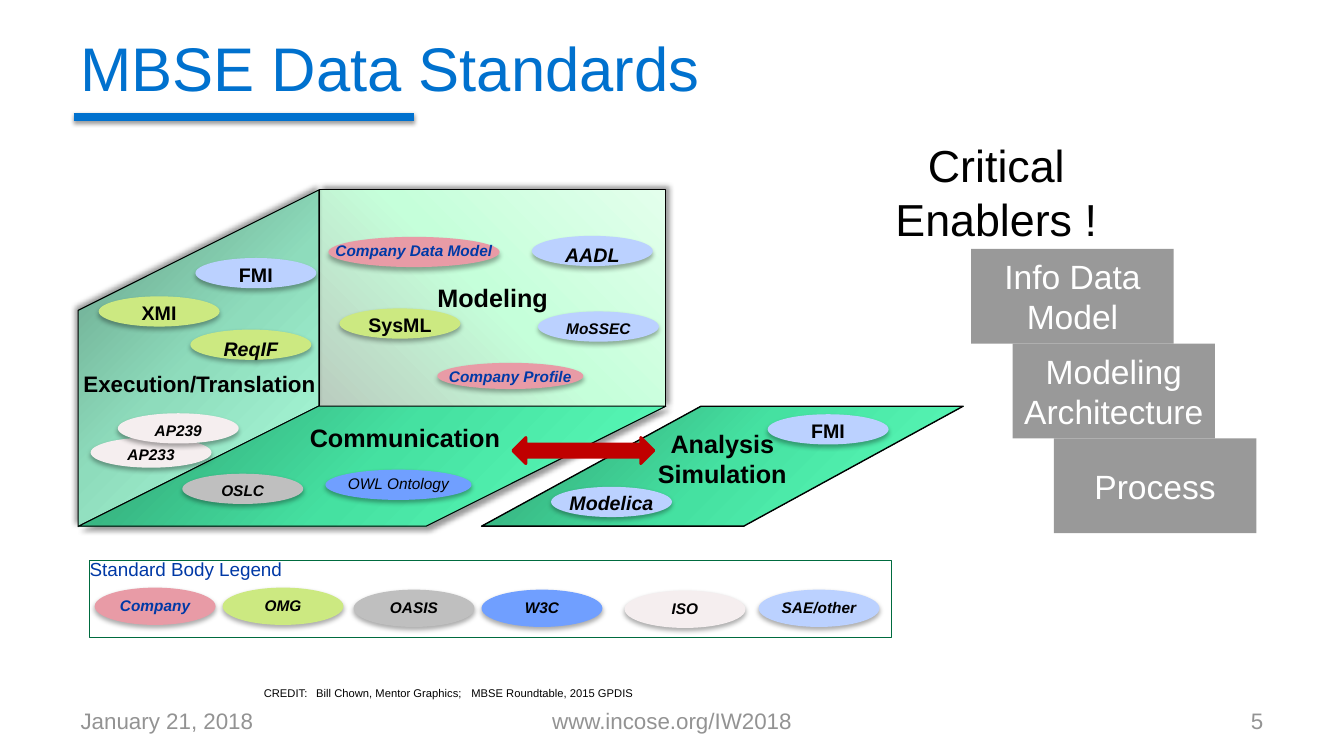
from dataclasses import dataclass

from lxml import etree
from pptx import Presentation
from pptx.dml.color import RGBColor
from pptx.enum.shapes import MSO_CONNECTOR, MSO_SHAPE
from pptx.enum.text import MSO_ANCHOR, PP_ALIGN
from pptx.oxml.ns import qn
from pptx.util import Inches, Pt

LEFT, CENTER, RIGHT = PP_ALIGN.LEFT, PP_ALIGN.CENTER, PP_ALIGN.RIGHT
TOP, MIDDLE = MSO_ANCHOR.TOP, MSO_ANCHOR.MIDDLE
RECT, OVAL = MSO_SHAPE.RECTANGLE, MSO_SHAPE.OVAL
PARALLELOGRAM, ARROW = MSO_SHAPE.PARALLELOGRAM, MSO_SHAPE.LEFT_RIGHT_ARROW
STRAIGHT = MSO_CONNECTOR.STRAIGHT


@dataclass(frozen=True)
class Theme:
    font: str = "Arial"
    title: str = "0071CE"
    footer: str = "939393"
    ink: str = "000000"
    paper: str = "FFFFFF"
    navy: str = "0039A6"
    frame: str = "006B3F"
    step: str = "999999"
    arrow: str = "C00000"
    company: str = "E89BA6"
    omg: str = "CCE981"
    oasis: str = "BFBFBF"
    w3c: str = "709FFF"
    iso: str = "F5EEEF"
    sae: str = "BBD1FF"
    back_wall: tuple = ("BACCBF", "C5FFDA", "E3FFEC")
    side_wall: tuple = ("649B84", "8EDCBC", "AEFFDE")
    floor: tuple = ("309E71", "45E1A1", "5EFFBD")
    title_size: float = 44
    callout_size: float = 32
    step_size: float = 24
    head_size: float = 18
    body_size: float = 16
    label_size: float = 14
    legend_size: float = 13.5
    small_size: float = 11
    credit_size: float = 8


T = Theme()
OVAL_SHADOW = (32, 3.5, 2.2, 90)


class Deck:
    def __init__(self, theme, width, height):
        self.theme = theme
        self.prs = Presentation()
        self.prs.slide_width, self.prs.slide_height = Inches(width), Inches(height)
        self.s = self.prs.slides.add_slide(self.prs.slide_layouts[6])

    def label(self, sp, text, size, color=T.ink, bold=False, italic=False, align=CENTER,
              anchor=TOP, insets=(0.1, 0.05, 0.1, 0.05), wrap=True, spacing=None, tabs=()):
        tf = sp.text_frame
        sides = ("margin_left", "margin_top", "margin_right", "margin_bottom")
        frame = dict(zip(sides, map(Inches, insets)))
        for name, value in {**frame, "word_wrap": wrap, "vertical_anchor": anchor}.items():
            setattr(tf, name, value)
        p = tf.paragraphs[0]
        p.text = text
        p.alignment = align
        if spacing:
            p.line_spacing = spacing
        if tabs:
            stops = etree.SubElement(p._p.get_or_add_pPr(), qn("a:tabLst"))
            for pos in tabs:
                etree.SubElement(stops, qn("a:tab"), pos=str(Inches(pos)), algn="l")
        style = {"name": self.theme.font, "size": Pt(size), "bold": bold, "italic": italic}
        for r in p.runs:
            for name, value in style.items():
                setattr(r.font, name, value)
            r.font.color.rgb = RGBColor.from_string(color)

    def text(self, box, text, size, **style):
        sp = self.s.shapes.add_textbox(*map(Inches, box))
        self.label(sp, text, size, **style)

    def shadow(self, sp, opacity, blur, distance, angle):
        spPr = sp._element.spPr
        effects = spPr.find(qn("a:effectLst"))
        if effects is None:
            effects = etree.SubElement(spPr, qn("a:effectLst"))
        outer = etree.SubElement(effects, qn("a:outerShdw"), blurRad=str(Pt(blur)),
                                 dist=str(Pt(distance)), dir=str(angle * 60000),
                                 algn="ctr", rotWithShape="0")
        color = etree.SubElement(outer, qn("a:srgbClr"), val=self.theme.ink)
        etree.SubElement(color, qn("a:alpha"), val=str(opacity * 1000))

    def gradient(self, sp, colors, angle):
        sp.fill.gradient()
        grad = sp._element.spPr.find(qn("a:gradFill"))
        for child in list(grad):
            grad.remove(child)
        stops = etree.SubElement(grad, qn("a:gsLst"))
        for i, color in enumerate(colors):
            stop = etree.SubElement(stops, qn("a:gs"), pos=str(i * 50000))
            etree.SubElement(stop, qn("a:srgbClr"), val=color)
        if angle is None:
            radial = etree.SubElement(grad, qn("a:path"))
            radial.set("path", "circle")
            etree.SubElement(radial, qn("a:fillToRect"), r="100000", b="100000")
        else:
            etree.SubElement(grad, qn("a:lin"), ang=str(angle * 60000), scaled="0")

    def shape(self, kind, box, fill=None, line=None, width=0.75, shadow=None, adj=None):
        sp = self.s.shapes.add_shape(kind, *map(Inches, box))
        sp.shadow.inherit = False
        if fill:
            sp.fill.solid()
            sp.fill.fore_color.rgb = RGBColor.from_string(fill)
        else:
            sp.fill.background()
        if line:
            sp.line.color.rgb = RGBColor.from_string(line)
            sp.line.width = Pt(width)
        else:
            sp.line.fill.background()
        if shadow:
            self.shadow(sp, *shadow)
        if adj:
            sp.adjustments[0] = adj
        return sp

    def face(self, kind, box, colors, angle, **look):
        sp = self.shape(kind, box, line=self.theme.ink, **look)
        self.gradient(sp, colors, angle)
        return sp

    def oval(self, box, fill, text, size, inset=0.03, bold=True, italic=True):
        sp = self.shape(OVAL, box, fill, shadow=OVAL_SHADOW)
        color = self.theme.navy if fill == self.theme.company else self.theme.ink
        self.label(sp, text, size, color=color, bold=bold, italic=italic,
                   insets=(0, inset, 0, 0.03), wrap=False)

    def rule(self, x1, y1, x2, y2, color, width):
        line = self.s.shapes.add_connector(STRAIGHT, *map(Inches, (x1, y1, x2, y2)))
        line.line.color.rgb = RGBColor.from_string(color)
        line.line.width = Pt(width)
        self.shadow(line, 38, 3.1, 1.6, 90)


def main():
    d = Deck(T, 13.34, 7.5)
    wide = (0.13, 0.07, 0.13, 0.07)
    d.rule(0.73, 1.16, 4.11, 1.16, T.title, 6)
    d.text((0.67, 0.04, 12.01, 1.25), "MBSE Data Standards", T.title_size, color=T.title,
           align=LEFT, anchor=MIDDLE, insets=wide)
    for x, w, text, align in ((0.67, 3.11, "January 21, 2018", LEFT),
                              (4.56, 4.22, "www.incose.org/IW2018", CENTER),
                              (9.56, 3.11, "5", RIGHT)):
        d.text((x, 6.95, w, 0.4), text, T.body_size, color=T.footer, align=align,
               anchor=MIDDLE, insets=wide)

    modeling = d.face(RECT, (3.17, 1.88, 3.44, 2.15), T.back_wall, 315,
                      shadow=(40, 4, 3, 315))
    d.label(modeling, "Modeling", T.head_size, bold=True, anchor=MIDDLE)
    execution = d.face(PARALLELOGRAM, (0.3, 2.36, 3.34, 2.39), T.side_wall, None,
                       shadow=(40, 4, 3, 225), adj=0.5)
    execution.rotation = 270
    execution._element.spPr.xfrm.set("flipV", "1")
    d.face(PARALLELOGRAM, (0.78, 4.03, 5.83, 1.19), T.floor, 45,
           shadow=(40, 4, 3, 45), adj=2)
    d.text((2.77, 4.14, 2.5, 0.4), "Communication", T.head_size, bold=True, anchor=MIDDLE)
    d.text((0.73, 3.62, 2.6, 0.37), "Execution/Translation", T.body_size, bold=True,
           align=LEFT, insets=(0.1, 0.05, 0, 0.05))
    analysis = d.face(PARALLELOGRAM, (4.78, 4.03, 4.78, 1.19), T.floor, 45, width=1, adj=1.83)
    d.label(analysis, "Analysis\vSimulation", T.head_size, bold=True, anchor=MIDDLE,
            insets=(0.1, 0.05, 0.1, 0.2), wrap=False)
    d.shape(ARROW, (5.09, 4.34, 1.4, 0.26), T.arrow, T.arrow, 2)

    for x, y, fill, text, inset, italic in (
            (3.37, 3.06, T.omg, "SysML", 0, False),
            (1.94, 2.56, T.sae, "FMI", 0, False),
            (1.89, 3.27, T.omg, "ReqIF", 0.03, True),
            (0.98, 2.94, T.omg, "XMI", 0, False),
            (5.28, 2.34, T.sae, "AADL", 0.03, True),
            (5.47, 4.83, T.sae, "Modelica", 0, True),
            (7.62, 4.11, T.sae, "FMI", 0, False)):
        d.oval((x, y, 1.2, 0.3), fill, text, T.label_size, inset, italic=italic)
    for x, y, fill, text in ((1.81, 4.7, T.oasis, "OSLC"), (5.34, 3.09, T.sae, "MoSSEC"),
                             (0.9, 4.34, T.iso, "AP233"), (1.17, 4.1, T.iso, "AP239")):
        d.oval((x, y, 1.2, 0.3), fill, text, T.small_size)
    for box, fill, text, bold in (
            ((3.23, 4.66, 1.45, 0.3), T.w3c, "OWL Ontology", False),
            ((3.26, 2.35, 1.7, 0.3), T.company, "Company Data Model", True),
            ((4.34, 3.6, 1.45, 0.26), T.company, "Company Profile", True)):
        d.oval(box, fill, text, T.small_size, 0, bold)

    legend = d.shape(RECT, (0.89, 5.56, 7.96, 0.77), line=T.frame)
    d.label(legend, "Standard Body Legend", T.legend_size, color=T.navy, align=LEFT,
            insets=(0, 0, 0, 0), spacing=0.9)
    for x, y, fill, text in ((0.94, 5.83, T.company, "Company"), (2.21, 5.83, T.omg, "OMG"),
                             (3.51, 5.85, T.oasis, "OASIS"), (4.78, 5.85, T.w3c, "W3C"),
                             (6.2, 5.86, T.iso, "ISO"), (7.53, 5.85, T.sae, "SAE/other")):
        d.oval((x, y, 1.2, 0.37), fill, text, T.small_size)

    d.text((2.52, 6.76, 4.15, 0.24),
           "CREDIT:\tBill Chown, Mentor Graphics;\tMBSE Roundtable, 2015 GPDIS",
           T.credit_size, align=LEFT, tabs=(0.52, 2.06))
    d.text((8.73, 1.32, 2.32, 1.18), "Critical\vEnablers !", T.callout_size)
    for i, text in enumerate(("Info Data Model", "Modeling Architecture", "Process")):
        step = d.shape(RECT, (9.64 + 0.41 * i, 2.47 + 0.94 * i, 2.01, 0.94), T.step)
        d.label(step, text, T.step_size, color=T.paper, anchor=MIDDLE,
                insets=(0.05, 0.05, 0.05, 0.05))
    d.prs.save("out.pptx")


if __name__ == "__main__":
    main()
